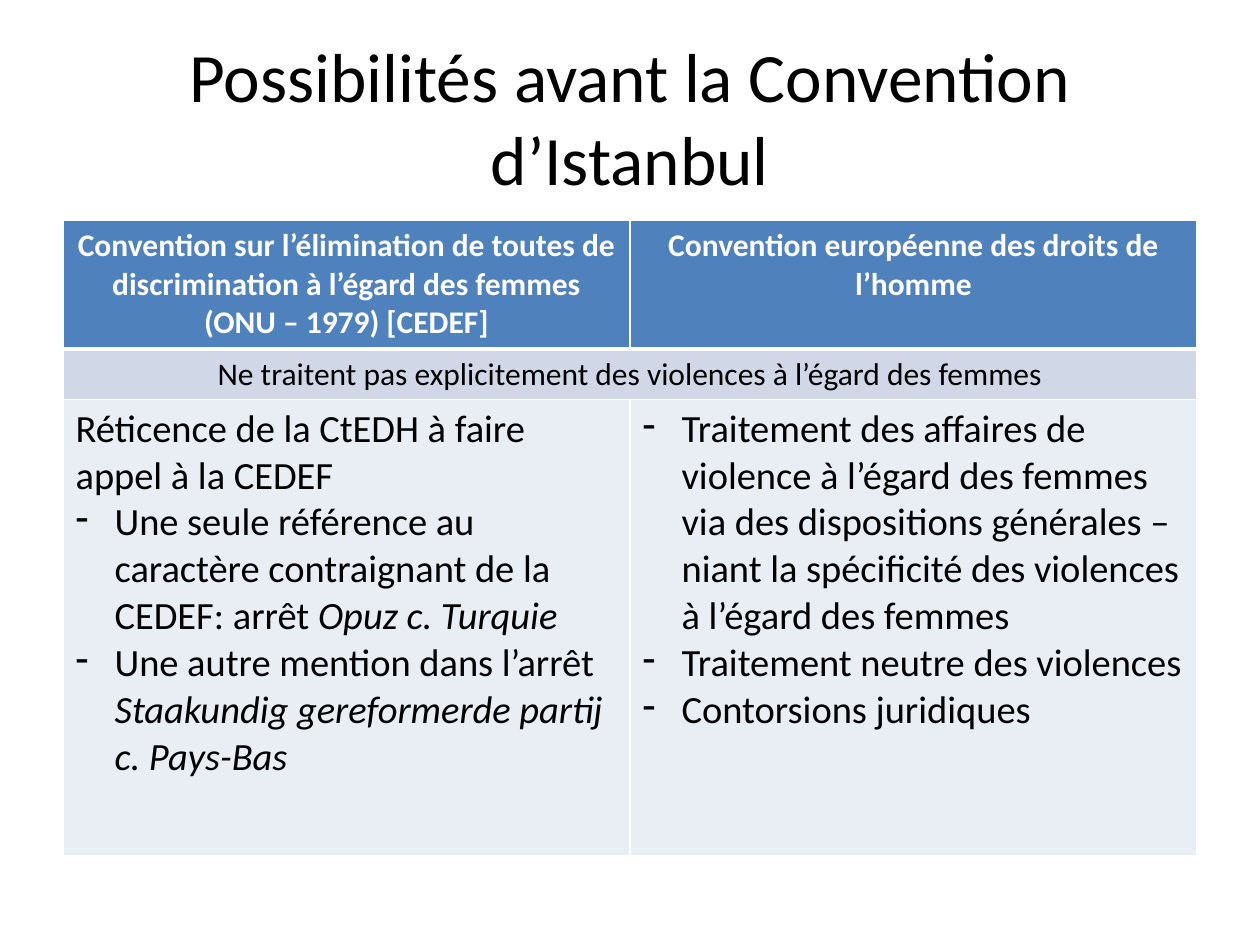
import dataclasses

import lxml.etree
import pptx
import pptx.dml.color
import pptx.enum.text
import pptx.oxml.ns
import pptx.slide
import pptx.util

Inches = pptx.util.Inches
Pt = pptx.util.Pt
RGBColor = pptx.dml.color.RGBColor
PP_ALIGN = pptx.enum.text.PP_ALIGN
qn = pptx.oxml.ns.qn

WHITE = RGBColor(0xFF, 0xFF, 0xFF)
BLACK = RGBColor(0x00, 0x00, 0x00)
HEADER_BLUE = RGBColor(0x4F, 0x81, 0xBD)
BAND_BLUE = RGBColor(0xD0, 0xD8, 0xE8)
PALE_BLUE = RGBColor(0xE9, 0xED, 0xF4)

COLUMN_WIDTHS = [4.5, 4.5]
ROW_HEIGHTS = [1.02, 0.4, 3.62]

TITLE = "Possibilités avant la Convention d’Istanbul"
HEADERS = [
    "Convention sur l’élimination de toutes de discrimination "
    "à l’égard des femmes\v(ONU – 1979) [CEDEF]",
    "Convention européenne des droits de l’homme",
]
SHARED_REMARK = "Ne traitent pas explicitement des violences à l’égard des femmes"
CEDEF_INTRO = "Réticence de la CtEDH à faire appel à la CEDEF"
CEDEF_POINTS = [
    ("Une seule référence au caractère contraignant de la CEDEF: arrêt ",
     "Opuz c. Turquie"),
    ("Une autre mention dans l’arrêt ",
     "Staakundig gereformerde partij c. Pays-Bas"),
]
ECHR_POINTS = [
    ("Traitement des affaires de violence à l’égard des femmes via des "
     "dispositions générales – niant la spécificité des violences "
     "à l’égard des femmes",),
    ("Traitement neutre des violences",),
    ("Contorsions juridiques",),
]


@dataclasses.dataclass
class SlideBuilder:
    slide: pptx.slide.Slide
    font: str = "Calibri"
    heading_size: float = 18
    body_size: float = 22
    indent: float = 0.31

    def run(self, paragraph, text, size, color=BLACK, bold=False, italic=False):
        for position, line in enumerate(text.split("\v")):
            if position:
                paragraph.add_line_break()
            run = paragraph.add_run()
            run.text = line
            run.font.name = self.font
            run.font.size = Pt(size)
            run.font.color.rgb = color
            run.font.bold = bold
            run.font.italic = italic

    def title(self, text, left, top, width, height):
        shape = self.slide.shapes.add_textbox(
            Inches(left), Inches(top), Inches(width), Inches(height))
        frame = shape.text_frame
        frame.word_wrap = True
        frame.vertical_anchor = pptx.enum.text.MSO_ANCHOR.MIDDLE
        paragraph = frame.paragraphs[0]
        paragraph.alignment = PP_ALIGN.CENTER
        self.run(paragraph, text, 39.6)

    def table(self, left, top, column_widths, row_heights):
        table = self.slide.shapes.add_table(
            len(row_heights), len(column_widths), Inches(left), Inches(top),
            Inches(sum(column_widths)), Inches(sum(row_heights))).table
        for column, width in zip(table.columns, column_widths):
            column.width = Inches(width)
        for row, height in zip(table.rows, row_heights):
            row.height = Inches(height)
        return table

    def cell_style(self, cell, fill, top=1, bottom=1):
        cell.fill.solid()
        cell.fill.fore_color.rgb = fill
        properties = cell._tc.get_or_add_tcPr()
        widths = {"a:lnL": 1, "a:lnR": 1, "a:lnT": top, "a:lnB": bottom}
        for position, (side, width) in enumerate(widths.items()):
            line = lxml.etree.Element(qn(side), w=str(Pt(width)))
            solid = lxml.etree.SubElement(line, qn("a:solidFill"))
            lxml.etree.SubElement(solid, qn("a:srgbClr"), val=str(WHITE))
            properties.insert(position, line)

    def heading(self, cell, text, color, bold):
        paragraph = cell.text_frame.paragraphs[0]
        paragraph.alignment = PP_ALIGN.CENTER
        self.run(paragraph, text, self.heading_size, color, bold)

    def bullet(self, paragraph, texts):
        properties = paragraph._p.get_or_add_pPr()
        properties.set("marL", str(Inches(self.indent)))
        properties.set("indent", str(-Inches(self.indent)))
        lxml.etree.SubElement(properties, qn("a:buFontTx"))
        lxml.etree.SubElement(properties, qn("a:buChar"), char="-")
        for position, text in enumerate(texts):
            self.run(paragraph, text, self.body_size, italic=position > 0)

    def body(self, cell, points, intro=None):
        frame = cell.text_frame
        paragraph = frame.paragraphs[0]
        if intro:
            self.run(paragraph, intro, self.body_size)
            paragraph = frame.add_paragraph()
        for position, texts in enumerate(points):
            if position:
                paragraph = frame.add_paragraph()
            self.bullet(paragraph, texts)


def main():
    presentation = pptx.Presentation()
    presentation.slide_width = Inches(10)
    presentation.slide_height = Inches(7.5)
    builder = SlideBuilder(
        presentation.slides.add_slide(presentation.slide_layouts[6]))

    builder.title(TITLE, 0.5, 0.3, 9, 1.25)
    table = builder.table(0.5, 1.75, COLUMN_WIDTHS, ROW_HEIGHTS)
    table.cell(1, 0).merge(table.cell(1, 1))
    for column, header in enumerate(HEADERS):
        builder.cell_style(table.cell(0, column), HEADER_BLUE, bottom=3)
        builder.cell_style(table.cell(1, column), BAND_BLUE, top=3)
        builder.cell_style(table.cell(2, column), PALE_BLUE)
        builder.heading(table.cell(0, column), header, WHITE, True)
    builder.heading(table.cell(1, 0), SHARED_REMARK, BLACK, False)
    builder.body(table.cell(2, 0), CEDEF_POINTS, CEDEF_INTRO)
    builder.body(table.cell(2, 1), ECHR_POINTS)

    presentation.save("out.pptx")


if __name__ == "__main__":
    main()
